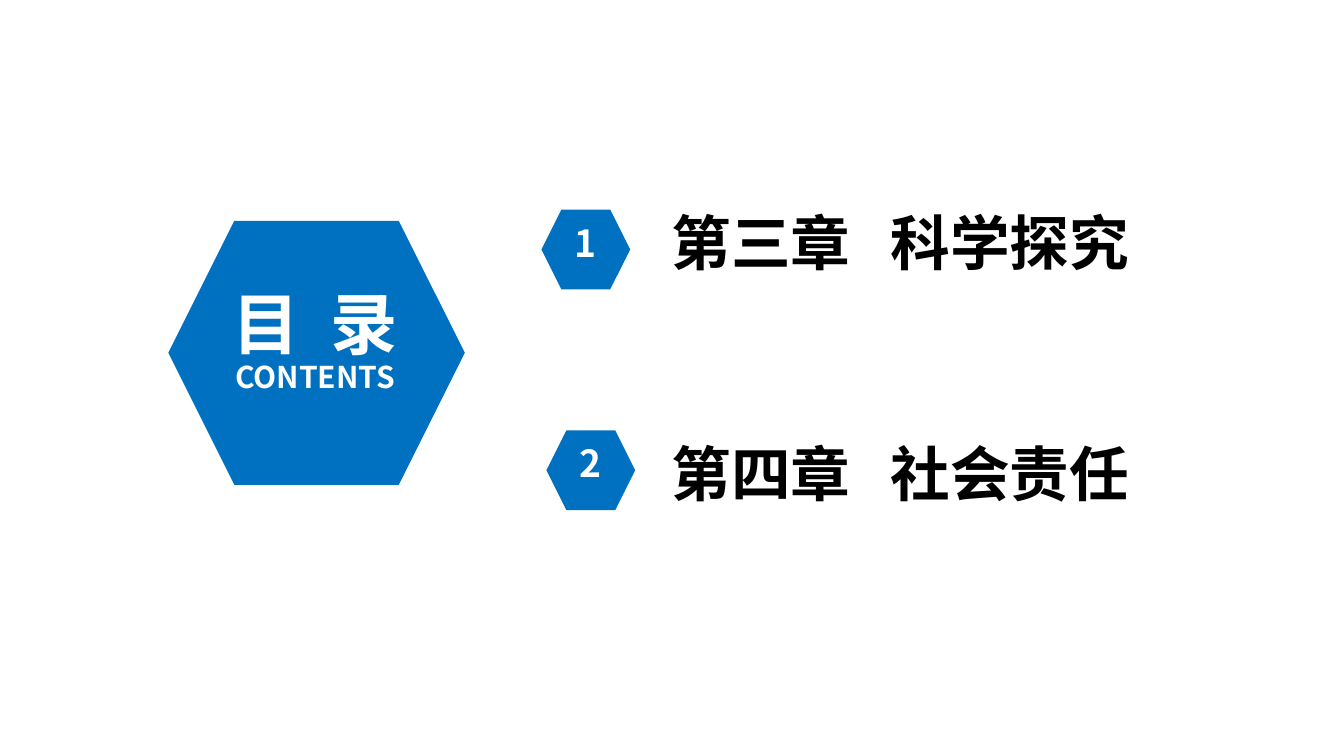
from pptx import Presentation
from pptx.dml.color import RGBColor as Rgb
from pptx.enum.shapes import MSO_SHAPE as Kind
from pptx.enum.text import MSO_ANCHOR as Anchor, MSO_AUTO_SIZE as Fit, PP_ALIGN as Align
from pptx.oxml.ns import qn
from pptx.util import Inches, Pt
from lxml.etree import SubElement as Sub

# Content: a line is (words, size, gap between words in points)
HEAD = [(["目", "录"], 48, 21.5), (["CONTENTS"], 21.4, 0)]
CHAPS = [  # number, words, hexagon left and top, text top
    ("1", ["第三章", "科学探究"], 5.37, 2.08, 2.08),
    ("2", ["第四章", "社会责任"], 5.42, 4.27, 4.38),
]
FONT = "Noto Sans CJK SC"
COLORS = {"blue": "0070C0", "white": "FFFFFF", "black": "000000"}
SPACE = 0.224  # width of a space, in ems


def color(name):
    return Rgb.from_string(COLORS[name])


def place(shape, *box):
    for name, size in zip(("left", "top", "width", "height"), box):
        setattr(shape, name, Inches(size))


def add_run(para, text, size, ink):
    run = para.add_run()
    run.text = text
    look = {"name": FONT, "size": Pt(size), "bold": True}
    for name, val in look.items():
        setattr(run.font, name, val)
    run.font.color.rgb = color(ink)
    Sub(run.font._element, qn("a:ea"), typeface=FONT)
    return run


def write(shape, lines, ink, align):
    frame = shape.text_frame
    look = {"word_wrap": True, "auto_size": Fit.NONE, "vertical_anchor": Anchor.TOP,
            "margin_left": Inches(0.1), "margin_right": Inches(0.1),
            "margin_top": Inches(0.05), "margin_bottom": Inches(0.05)}
    for name, val in look.items():
        setattr(frame, name, val)
    for i, (words, size, gap) in enumerate(lines):
        para = frame.add_paragraph() if i else frame.paragraphs[0]
        form = {"alignment": align, "line_spacing": 0.88,
                "space_before": Pt(0), "space_after": Pt(0)}
        for name, val in form.items():
            setattr(para, name, val)
        props = para._p.get_or_add_pPr()
        props.set("marL", "0")
        props.set("indent", "0")
        Sub(props, qn("a:buNone"))
        for j, word in enumerate(words):
            if j:  # one space, widened by letter spacing
                space = add_run(para, " ", size, ink)
                extra = gap - SPACE * size
                space.font._element.set("spc", str(round(extra * 100)))
            add_run(para, word, size, ink)


def add_blue(kind, *box):
    shape = slide.shapes.add_shape(kind, *map(Inches, box))
    shape.shadow.inherit = False
    shape.fill.solid()
    shape.fill.fore_color.rgb = color("blue")
    shape.line.fill.background()
    return shape


deck = Presentation()
deck.slide_width, deck.slide_height = Inches(13.33), Inches(7.5)
slide = deck.slides.add_slide(deck.slide_layouts[3])
title, *bodies = [s for s in slide.placeholders if s.placeholder_format.idx < 3]

# Contents hexagon, with the title in front
hexa = add_blue(Kind.HEXAGON, 1.67, 2.19, 2.94, 2.62)
hexa._element.addnext(title._element)
place(title, 1.97, 2.85, 2.31, 1.27)
write(title, HEAD, "white", Align.CENTER)

# Chapters: numbered hexagon and name
for body, (num, words, left, top, text_top) in zip(bodies, CHAPS):
    add_blue(Kind.HEXAGON, left, top, 0.88, 0.79)
    badge = add_blue(Kind.RECTANGLE, left + 0.23, top + 0.11, 0.42, 0.55)
    write(badge, [([num], 26.6, 0)], "white", Align.CENTER)
    place(body, 6.56, text_top, 6.04, 0.82)
    write(body, [(words, 42.6, 28.6)], "black", Align.LEFT)

# Unused placeholders
for spare in list(slide.placeholders):
    if not spare.text_frame.text:
        spare._element.getparent().remove(spare._element)

deck.save("out.pptx")
